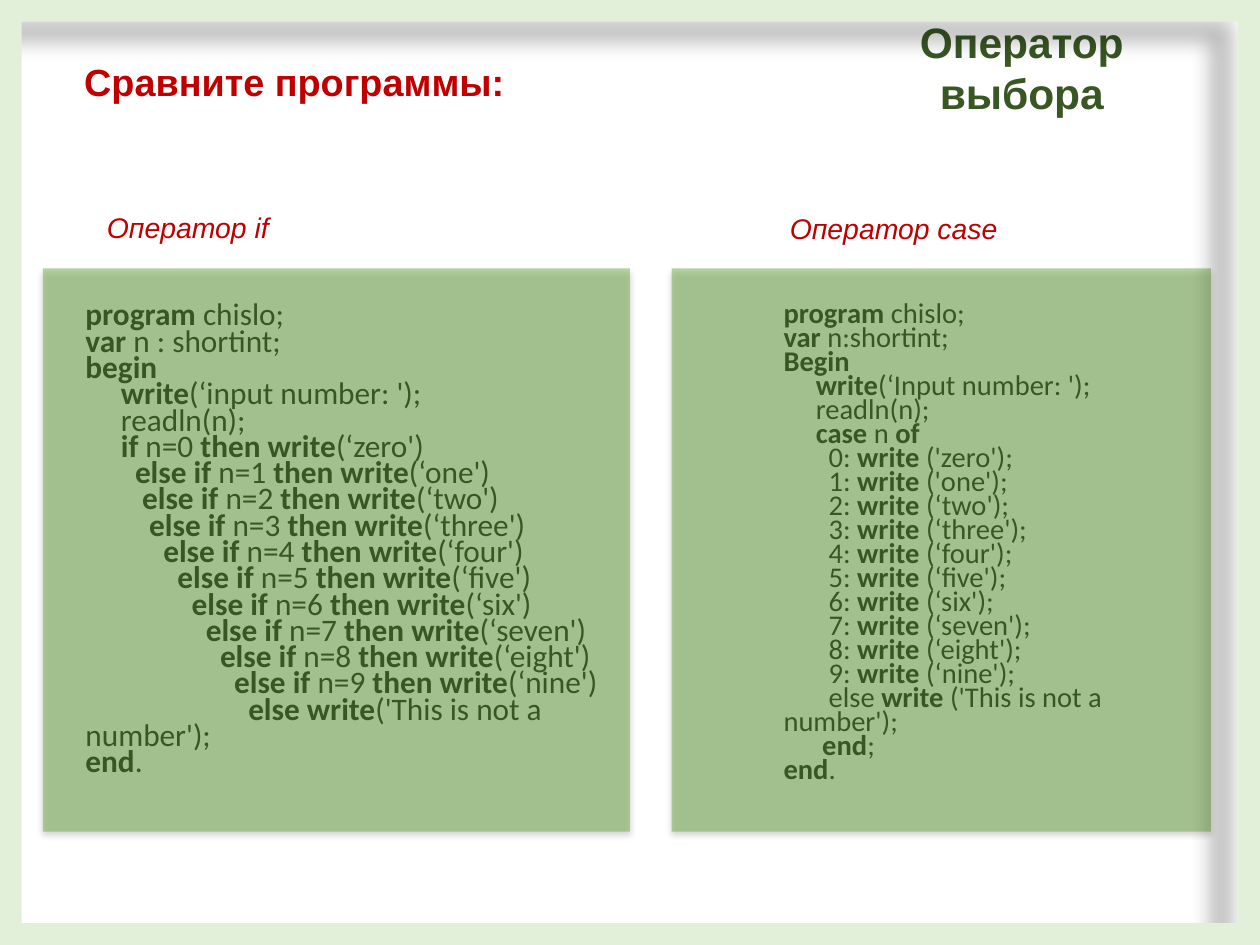
from lxml import etree
from pptx import Presentation
from pptx import util as u
from pptx.dml.color import RGBColor
from pptx.enum import shapes, text
from pptx.oxml.ns import qn

RED, GREEN, DARK, PALE, BLACK = "C00000", "70AD47", "385723", "E2F0D9", "000000"
SPACE = 0.226  # width of one space in Calibri, in ems


def rgb(value):
    return RGBColor.from_string(value)


def set_all(obj, values):
    for name, value in values.items():
        setattr(obj, name, value)


class SlideBuilder:
    HEADING = dict(name="Arial", bold=True)
    CAPTION = dict(name="Arial", size=u.Pt(16.2), italic=True)
    CODE = dict(name="Calibri")

    def __init__(self, slide):
        self.s = slide

    def frame_for_text(self, box, **options):
        sp = self.s.shapes.add_textbox(*map(u.Inches, box))
        tf = sp.text_frame
        set_all(tf, dict(word_wrap=True) | options)
        return tf

    def add_run(self, p, content, color, font):
        r = p.add_run()
        r.text = content
        set_all(r.font, font)
        r.font.color.rgb = rgb(color)

    def label(self, box, content, color, font, paragraph=None, **options):
        p = self.frame_for_text(box, **options).paragraphs[0]
        set_all(p, paragraph or {})
        self.add_run(p, content, color, font)

    def code(self, box, lines, size, before=0):
        """Lines are (indent in spaces, text); *stars* enclose bold words."""
        tf = self.frame_for_text(box)
        for i, (spaces, line) in enumerate(lines):
            p = tf.add_paragraph() if i else tf.paragraphs[0]
            set_all(p, dict(line_spacing=0.7, space_before=u.Pt(0 if i else before)))
            p._p.get_or_add_pPr().set("indent", str(u.Pt(spaces * SPACE * size)))
            for j, part in enumerate(line.split("*")):
                if part:
                    font = self.CODE | dict(size=u.Pt(size), bold=j % 2 == 1)
                    self.add_run(p, part, BLACK, font)

    def panel(self, kind, box, color, shadow, opacity=100):
        sp = self.s.shapes.add_shape(kind, *map(u.Inches, box))
        sp.shadow.inherit = False
        sp.fill.solid()
        sp.fill.fore_color.rgb = rgb(color)
        sp.line.fill.background()
        props = sp._element.spPr
        if opacity < 100:
            clr = props.find(qn("a:solidFill"))[0]
            etree.SubElement(clr, qn("a:alpha"), val=str(opacity * 1000))
        alpha, blur, dist, angle = shadow
        outer = etree.SubElement(
            props.find(qn("a:effectLst")), qn("a:outerShdw"),
            blurRad=str(u.Pt(blur)), dist=str(u.Pt(dist)),
            dir=str(angle * 60000), algn="ctr", rotWithShape="0")
        clr = etree.SubElement(outer, qn("a:srgbClr"), val=BLACK)
        etree.SubElement(clr, qn("a:alpha"), val=str(alpha * 1000))
        return sp


NUMBERS = "zero one two three four five six seven eight nine".split()

IF_PROGRAM = [
    (0, "*program* chislo;"),
    (0, "*var* n : shortint;"),
    (0, "*begin*"),
    (5, "*write*(‘input number: ');"),
    (5, "readln(n);"),
    (5, "*if* n=0 *then write*(‘zero')"),
    *[(max(2 * n + 3, n + 6), f"*else if* n={n} *then write*(‘{NUMBERS[n]}')")
      for n in range(1, 10)],
    (23, "*else write*('This is not a number');"),
    (0, "*end*."),
]

CASE_PROGRAM = [
    (0, "*program* chislo;"),
    (0, "*var* n:shortint;"),
    (0, "*Begin*"),
    (5, "*write*(‘Input number: ');"),
    (5, "readln(n);"),
    (5, "*case* n *of*"),
    *[(7, f"{n}: *write* ({'‘' if n > 1 else chr(39)}{word}');")
      for n, word in enumerate(NUMBERS)],
    (7, "else *write* ('This is not a number');"),
    (6, "*end*;"),
    (0, "*end*."),
]


def main():
    prs = Presentation()
    set_all(prs, dict(slide_width=u.Inches(10), slide_height=u.Inches(7.5)))
    b = SlideBuilder(prs.slides.add_slide(prs.slide_layouts[6]))

    # Captions and programs
    bottom = dict(vertical_anchor=text.MSO_ANCHOR.BOTTOM)
    spacing = dict(line_spacing=0.85, space_before=u.Pt(7.5))
    b.label((0.75, 1.25, 4, 0.74), "Оператор if", RED, b.CAPTION, spacing, **bottom)
    b.code((0.58, 2.37, 4.48, 4.39), IF_PROGRAM, 17.9, before=7.5)
    b.label((6.17, 1.44, 3.22, 0.56), "Оператор case", RED, b.CAPTION, spacing, **bottom)
    b.code((6.12, 2.37, 3.31, 4.23), CASE_PROGRAM, 16.3)

    # Subtitle
    b.label((0.57, 0.42, 4.06, 0.46), "Сравните программы:", RED,
            b.HEADING | dict(size=u.Pt(21.6)))

    # Translucent panels over the programs
    for left, width in ((5.33, 4.28), (0.34, 4.66)):
        b.panel(shapes.MSO_SHAPE.RECTANGLE, (left, 2.13, width, 4.47), GREEN,
                (32, 3.5, 2.2, 90), opacity=50)

    # Title
    margins = dict.fromkeys(
        ("margin_left", "margin_top", "margin_right", "margin_bottom"), 0)
    b.label((6.78, 0.13, 2.66, 0.72), "Оператор выбора", DARK,
            b.HEADING | dict(size=u.Pt(24.3)),
            dict(alignment=text.PP_ALIGN.CENTER), word_wrap=False, **margins)

    # Slide border
    border = b.panel(shapes.MSO_SHAPE.FRAME, (0, 0, 10, 7.5), PALE,
                     (28, 11.8, 19.7, 141))
    border.adjustments[0] = 0.023

    prs.save("out.pptx")


if __name__ == "__main__":
    main()
